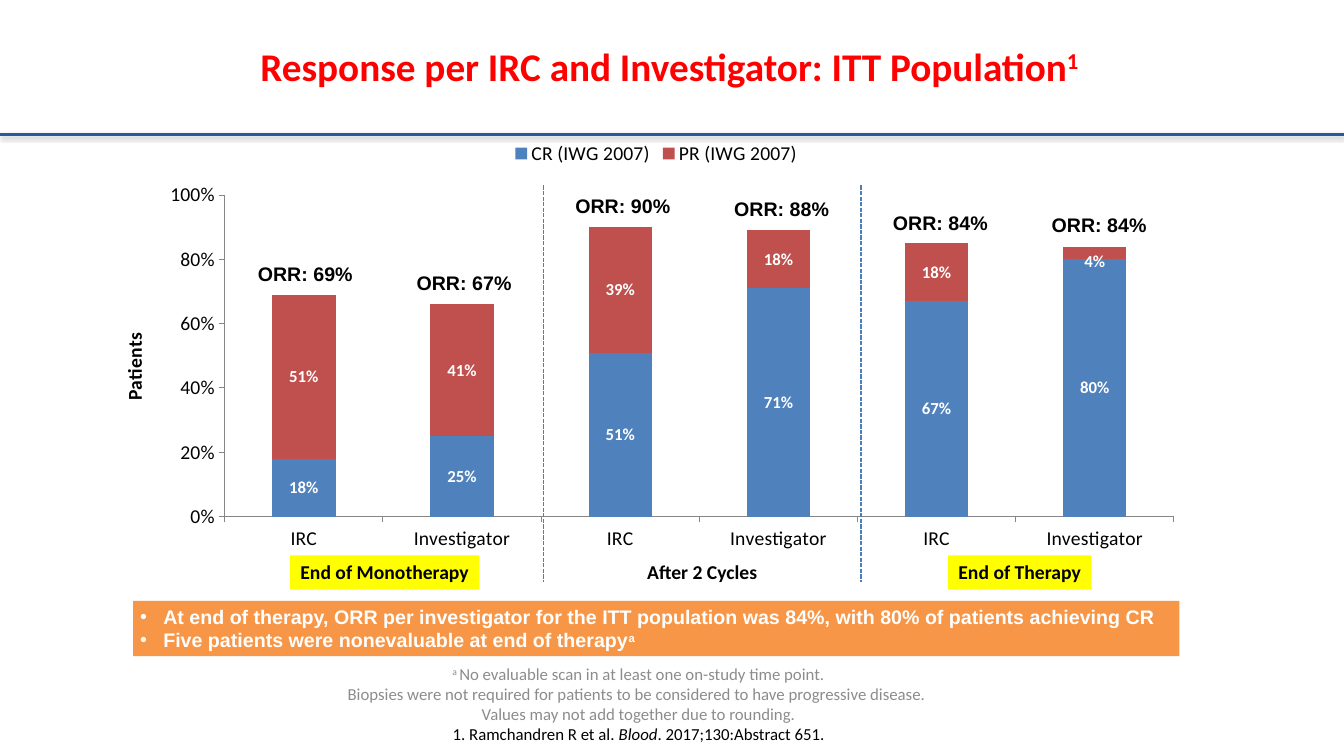
from lxml.etree import SubElement
from pptx import Presentation
from pptx.chart.data import CategoryChartData
from pptx.dml.color import RGBColor
from pptx.enum.chart import XL_CHART_TYPE as ChartType
from pptx.enum.chart import XL_LABEL_POSITION as LabelPosition
from pptx.enum.chart import XL_LEGEND_POSITION as LegendPosition
from pptx.enum.chart import XL_TICK_MARK as TickMark
from pptx.enum.dml import MSO_LINE as Dash
from pptx.enum.shapes import MSO_CONNECTOR as Connector
from pptx.enum.shapes import MSO_SHAPE as Shape
from pptx.enum.text import MSO_ANCHOR as Anchor
from pptx.enum.text import PP_ALIGN as Align
from pptx.oxml import parse_xml
from pptx.oxml.ns import nsdecls, qn
from pptx.util import Inches, Pt

COLUMNS, ROWS = 160, 90
CHART_BOX = (13.92, 15.48, 128.4, 51.72)
PLOT = {"x": 0.1, "y": 0.15, "w": 0.88, "h": 0.74}
BAND = 18.9  # columns per chart category
PLOT_LEFT = 26.9

CATEGORIES = ["IRC", "Investigator"] * 3
RESPONSES = [
    ("CR (IWG 2007)", [0.18, 0.25, 0.51, 0.71, 0.67, 0.8], "4F81BD"),
    ("PR (IWG 2007)", [0.51, 0.41, 0.39, 0.18, 0.18, 0.04], "C0504D"),
]
ORR_LABELS = [("69%", 30.72), ("67%", 31.8), ("90%", 22.68),
              ("88%", 23.04), ("84%", 24.6), ("84%", 24.84)]
PHASES = [("End of Monotherapy", 22.56, "FFFF00"),
          ("After 2 Cycles", 15.72, None),
          ("End of Therapy", 17.04, "FFFF00")]

TITLE = [[("Response per IRC and Investigator: ITT Population", {}),
          ("1 ", {"raised": True})]]
FINDINGS = [
    [("At end of therapy, ORR per investigator for the ITT population was 84%, "
      "with 80% of patients achieving CR", {})],
    [("Five patients were nonevaluable at end of therapy", {}),
     ("a", {"raised": True})],
]
FOOTNOTES = [
    [("a ", {"raised": True}),
     ("No evaluable scan in at least one on-study time point.", {})],
    [("Biopsies were not required for patients to be considered to have "
      "progressive disease. ", {})],
    [("Values may not add together due to rounding.", {})],
    [("1. Ramchandren R et al. ", {"color": "000000"}),
     ("Blood", {"color": "000000", "italic": True}),
     (". 2017;130:Abstract 651.", {"color": "000000"})],
]


def rgb(value):
    return RGBColor.from_string(value)


class ResponseSlide:
    """Draws on a 160 by 90 grid of square cells."""

    font, label_font = "Calibri", "Arial"
    tight = (0.07, 0.04, 0.07, 0.04)

    def __init__(self, deck):
        self.cell_width = deck.slide_width / COLUMNS
        self.cell_height = deck.slide_height / ROWS
        self.slide = deck.slides.add_slide(deck.slide_layouts[5])
        self.shapes = self.slide.shapes

    def place(self, left, top, width, height):
        return (round(left * self.cell_width), round(top * self.cell_height),
                round(width * self.cell_width), round(height * self.cell_height))

    def style(self, font, size, color, bold=False, name=None):
        font.name, font.size, font.bold = name or self.font, Pt(size), bold
        font.color.rgb = rgb(color)

    def fill_text(self, frame, paragraphs, size, color="000000", bold=False, name=None,
                  align=Align.CENTER, anchor=Anchor.TOP, insets=(0.1, 0.05, 0.1, 0.05),
                  wrap=True):
        """Fill a frame with paragraphs, each a list of (text, options) runs."""
        frame.word_wrap, frame.vertical_anchor = wrap, anchor
        (frame.margin_left, frame.margin_top,
         frame.margin_right, frame.margin_bottom) = map(Inches, insets)
        for index, pieces in enumerate(paragraphs):
            paragraph = frame.add_paragraph() if index else frame.paragraphs[0]
            paragraph.alignment = align
            for text, options in pieces:
                run = paragraph.add_run()
                run.text = text
                self.style(run.font, size, options.get("color", color), bold, name)
                run.font.italic = options.get("italic", False)
                if options.get("raised"):
                    run.font._element.set("baseline", "30000")

    def title(self, box, paragraphs):
        heading = self.shapes.title
        heading.left, heading.top, heading.width, heading.height = self.place(*box)
        self.fill_text(heading.text_frame, paragraphs, 28, "FF0000", True,
                       anchor=Anchor.MIDDLE)

    def text(self, box, paragraphs, size, fill=None, **options):
        if fill:
            panel = self.shapes.add_shape(Shape.RECTANGLE, *self.place(*box))
            panel.shadow.inherit = False
            panel.fill.solid()
            panel.fill.fore_color.rgb = rgb(fill)
            panel.line.fill.background()
        else:
            panel = self.shapes.add_textbox(*self.place(*box))
        self.fill_text(panel.text_frame, paragraphs, size, **options)
        return panel

    def bullets(self, box, paragraphs, size, fill, **options):
        panel = self.text(box, paragraphs, size, fill, align=Align.LEFT, **options)
        for paragraph in panel.text_frame.paragraphs:
            properties = paragraph._p.get_or_add_pPr()
            properties.set("marL", str(Inches(0.23)))
            properties.set("indent", str(Inches(-0.23)))
            SubElement(properties, qn("a:buFont"), typeface="Arial")
            SubElement(properties, qn("a:buChar"), char="•")

    def line(self, left, top, width, height, color, weight, dash=None, shadow=False):
        x, y, dx, dy = self.place(left, top, width, height)
        stroke = self.shapes.add_connector(Connector.STRAIGHT, x, y, x + dx, y + dy)
        stroke.line.color.rgb, stroke.line.width = rgb(color), Pt(weight)
        if dash:
            stroke.line.dash_style = dash
        effects = SubElement(stroke._element.spPr, qn("a:effectLst"))
        if shadow:
            cast = SubElement(effects, qn("a:outerShdw"), blurRad=str(Pt(3.1)),
                              dist=str(Pt(1.6)), dir="5400000", rotWithShape="0")
            tint = SubElement(cast, qn("a:srgbClr"), val="000000")
            SubElement(tint, qn("a:alpha"), val="38000")

    def stacked_chart(self, box):
        data = CategoryChartData(number_format="0%")
        data.categories = CATEGORIES
        for name, values, _ in RESPONSES:
            data.add_series(name, values)
        chart = self.shapes.add_chart(
            ChartType.COLUMN_STACKED, *self.place(*box), data).chart
        self.style(chart.font, 18, "000000")
        chart.has_title = False
        chart.has_legend = True
        chart.legend.position = LegendPosition.TOP
        chart.legend.include_in_layout = False
        self.style(chart.legend.font, 14, "000000")
        plot = chart.plots[0]
        plot.gap_width, plot.overlap, plot.vary_by_categories = 150, 100, False
        for series, (_, _, color) in zip(plot.series, RESPONSES):
            series.format.fill.solid()
            series.format.fill.fore_color.rgb = rgb(color)
            self.value_labels(series.data_labels)
        self.lower_label(plot.series[1].points[5].data_label)
        self.axes(chart)
        self.fix_plot_area(chart)

    def value_labels(self, labels):
        labels.show_value, labels.position = True, LabelPosition.CENTER
        labels.number_format, labels.number_format_is_linked = "0%", False
        self.style(labels.font, 12, "FFFFFF", True)

    def lower_label(self, label):
        """Nudge the label of the thinnest segment downwards."""
        self.style(label.font, 12, "FFFFFF", True)
        label.position = LabelPosition.CENTER
        label._dLbl.find(qn("c:idx")).addnext(parse_xml(
            f'<c:layout {nsdecls("c")}><c:manualLayout><c:x val="0"/>'
            '<c:y val="0.02"/></c:manualLayout></c:layout>'))

    def axes(self, chart):
        for axis in (chart.category_axis, chart.value_axis):
            axis.has_major_gridlines = False
            axis.major_tick_mark, axis.minor_tick_mark = TickMark.OUTSIDE, TickMark.NONE
            axis.format.line.color.rgb = rgb("868686")
            self.style(axis.tick_labels.font, 14, "000000")
        scale = chart.value_axis
        scale.minimum_scale, scale.maximum_scale, scale.major_unit = 0, 1, 0.2
        scale.tick_labels.number_format = "0%"
        scale.tick_labels.number_format_is_linked = False
        caption = scale.axis_title.text_frame
        caption.text = "Patients"
        self.style(caption.paragraphs[0].runs[0].font, 14, "000000", True)

    def fix_plot_area(self, chart):
        area = chart._chartSpace.chart.plotArea
        for automatic in area.findall(qn("c:layout")):
            area.remove(automatic)
        shares = "".join(f'<c:{key} val="{share}"/>' for key, share in PLOT.items())
        area.insert(0, parse_xml(
            f'<c:layout {nsdecls("c")}><c:manualLayout><c:layoutTarget val="inner"/>'
            f'<c:xMode val="edge"/><c:yMode val="edge"/>{shares}'
            '</c:manualLayout></c:layout>'))


def main():
    deck = Presentation()
    deck.slide_width, deck.slide_height = Inches(13.33), Inches(7.5)
    page = ResponseSlide(deck)
    page.title((3.2, 1.3, 153.6, 13), TITLE)
    page.line(0, 16, COLUMNS, 0, "265A99", 2, shadow=True)
    page.bullets((15.84, 71.52, 124.56, 6.6), FINDINGS, 14, "F79646",
                 color="FFFFFF", bold=True, name=page.label_font, insets=page.tight)
    page.text((27.12, 81.1, 98.4, 4.8), FOOTNOTES, 12, color="8C8C8C",
              anchor=Anchor.MIDDLE, insets=(0.05, 0.05, 0.1, 0))
    page.stacked_chart(CHART_BOX)
    for index, (rate, top) in enumerate(ORR_LABELS):
        center = PLOT_LEFT + BAND * (index + 0.5)
        page.text((center - 6.72, top, 13.44, 3.72), [[(f"ORR: {rate}", {})]], 14,
                  bold=True, name=page.label_font, anchor=Anchor.MIDDLE,
                  insets=page.tight)
    for index, (phase, width, fill) in enumerate(PHASES):
        center = PLOT_LEFT + BAND * (2 * index + 1)
        page.text((center - width / 2, 66.12, width, 4.08), [[(phase, {})]], 14,
                  fill, bold=True, wrap=False)
    for boundary in (2, 4):
        page.line(PLOT_LEFT + BAND * boundary, 22.08, 0, 47.16, "4B7EBC", 1,
                  Dash.SQUARE_DOT)
    deck.save("out.pptx")


if __name__ == "__main__":
    main()
